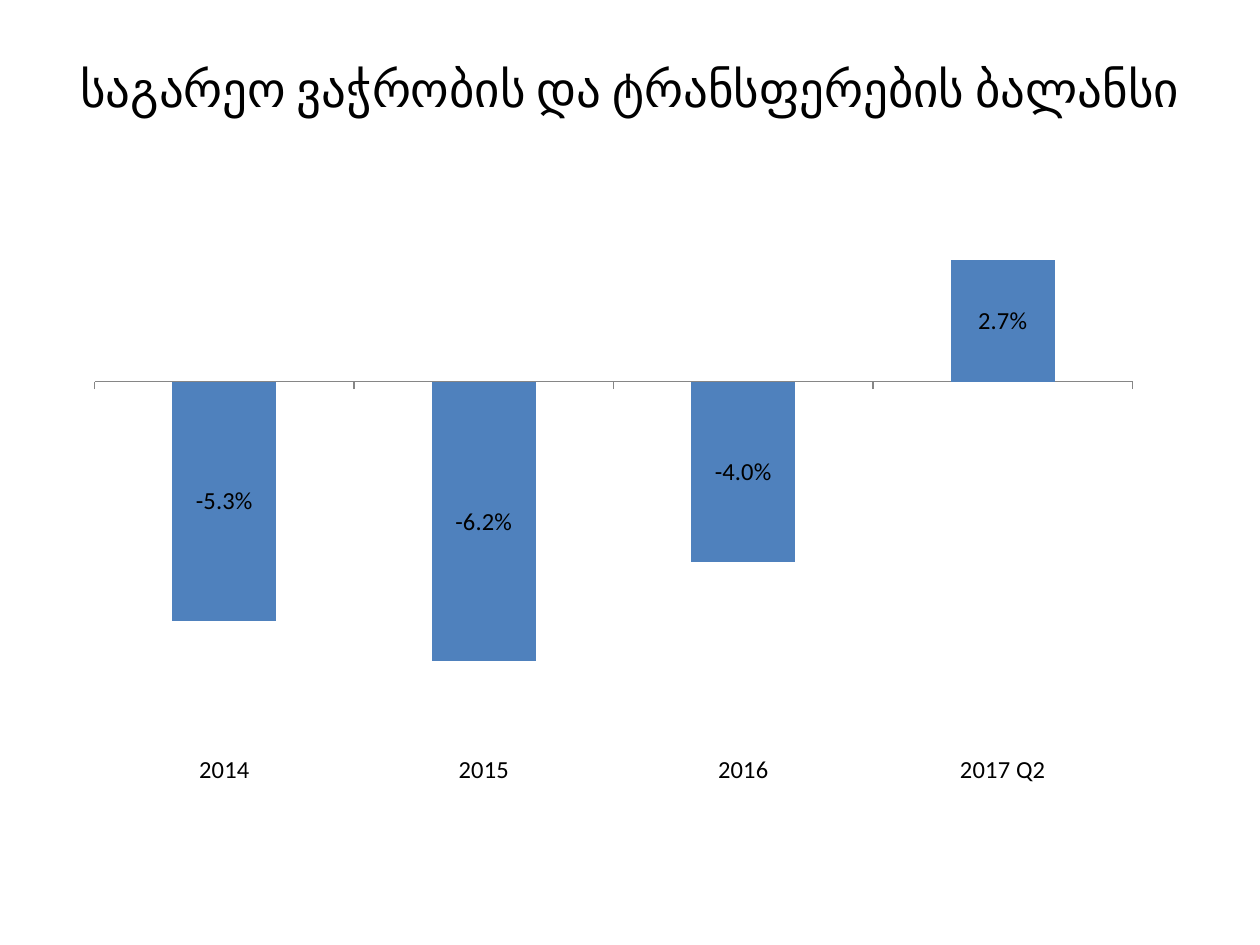
"""Build a slide with a stacked column chart of the trade and transfer balance."""
from dataclasses import dataclass

from pptx import Presentation
from pptx.chart.data import CategoryChartData
from pptx.dml.color import RGBColor
from pptx.enum.chart import XL_CHART_TYPE, XL_LABEL_POSITION, XL_TICK_LABEL_POSITION, XL_TICK_MARK
from pptx.enum.text import MSO_ANCHOR, PP_ALIGN
from pptx.slide import Slide
from pptx.util import Inches, Pt

COLUMN_STACKED = XL_CHART_TYPE.COLUMN_STACKED
LABEL_CENTER = XL_LABEL_POSITION.CENTER
LABELS_LOW = XL_TICK_LABEL_POSITION.LOW
TICK_OUTSIDE, TICK_NONE = XL_TICK_MARK.OUTSIDE, XL_TICK_MARK.NONE
ANCHOR_MIDDLE = MSO_ANCHOR.MIDDLE
ALIGN_CENTER = PP_ALIGN.CENTER
BLANK_LAYOUT = 6


@dataclass(frozen=True)
class Theme:
    font: str = "Calibri"
    text: RGBColor = RGBColor(0x00, 0x00, 0x00)
    column: RGBColor = RGBColor(0x4F, 0x81, 0xBD)
    axis: RGBColor = RGBColor(0x86, 0x86, 0x86)
    title_size: Pt = Pt(28)
    chart_size: Pt = Pt(14)
    axis_width: Pt = Pt(0.75)


@dataclass(frozen=True)
class Box:
    left: float
    top: float
    width: float
    height: float

    def lengths(self) -> tuple[Inches, ...]:
        return tuple(Inches(value) for value in (self.left, self.top, self.width, self.height))


@dataclass(frozen=True)
class Balance:
    period: str
    share: float


THEME = Theme()
TITLE = "საგარეო ვაჭრობის და ტრანსფერების ბალანსი"
TITLE_BOX = Box(0.5, 0.3, 9, 1.25)
CHART_BOX = Box(0.58, 1.5, 8.58, 4.83)
BALANCES = (
    Balance("2014", -0.053),
    Balance("2015", -0.062),
    Balance("2016", -0.04),
    Balance("2017 Q2", 0.027),
)


def apply_format(target: object, values: dict[str, object]) -> None:
    for name, value in values.items():
        setattr(target, name, value)


def style_font(font: object, size: Pt) -> None:
    apply_format(font, {"name": THEME.font, "size": size, "bold": False})
    font.color.rgb = THEME.text


def add_title(slide: Slide, text: str, box: Box) -> None:
    frame = slide.shapes.add_textbox(*box.lengths()).text_frame
    apply_format(frame, {
        "word_wrap": True,
        "vertical_anchor": ANCHOR_MIDDLE,
        "margin_bottom": Inches(0.5),
    })
    paragraph = frame.paragraphs[0]
    paragraph.alignment = ALIGN_CENTER
    run = paragraph.add_run()
    run.text = text
    style_font(run.font, THEME.title_size)


def add_balance_chart(slide: Slide, balances: tuple[Balance, ...], box: Box) -> None:
    data = CategoryChartData(number_format="0.0%")
    data.categories = [balance.period for balance in balances]
    data.add_series("Series 1", [balance.share for balance in balances])
    chart = slide.shapes.add_chart(COLUMN_STACKED, *box.lengths(), data).chart
    apply_format(chart, {"has_legend": False, "has_title": False})
    style_font(chart.font, THEME.chart_size)

    apply_format(chart.category_axis, {
        "tick_label_position": LABELS_LOW,
        "major_tick_mark": TICK_OUTSIDE,
        "minor_tick_mark": TICK_NONE,
        "has_major_gridlines": False,
    })
    axis_line = chart.category_axis.format.line
    axis_line.color.rgb = THEME.axis
    axis_line.width = THEME.axis_width
    apply_format(chart.value_axis, {
        "minimum_scale": -0.08,
        "maximum_scale": 0.04,
        "has_major_gridlines": False,
        "visible": False,
    })
    chart.value_axis.tick_labels.number_format = "0.00%"
    chart.value_axis.tick_labels.number_format_is_linked = False

    plot = chart.plots[0]
    apply_format(plot, {"gap_width": 150, "overlap": 100, "vary_by_categories": False})
    series = plot.series[0]
    series.invert_if_negative = False
    series.format.fill.solid()
    series.format.fill.fore_color.rgb = THEME.column
    apply_format(series.data_labels, {
        "show_value": True,
        "number_format": "0.0%",
        "number_format_is_linked": False,
        "position": LABEL_CENTER,
    })
    style_font(series.data_labels.font, THEME.chart_size)


def main() -> None:
    presentation = Presentation()
    apply_format(presentation, {"slide_width": Inches(10), "slide_height": Inches(7.5)})
    slide = presentation.slides.add_slide(presentation.slide_layouts[BLANK_LAYOUT])
    add_title(slide, TITLE, TITLE_BOX)
    add_balance_chart(slide, BALANCES, CHART_BOX)
    presentation.save("out.pptx")


if __name__ == "__main__":
    main()
